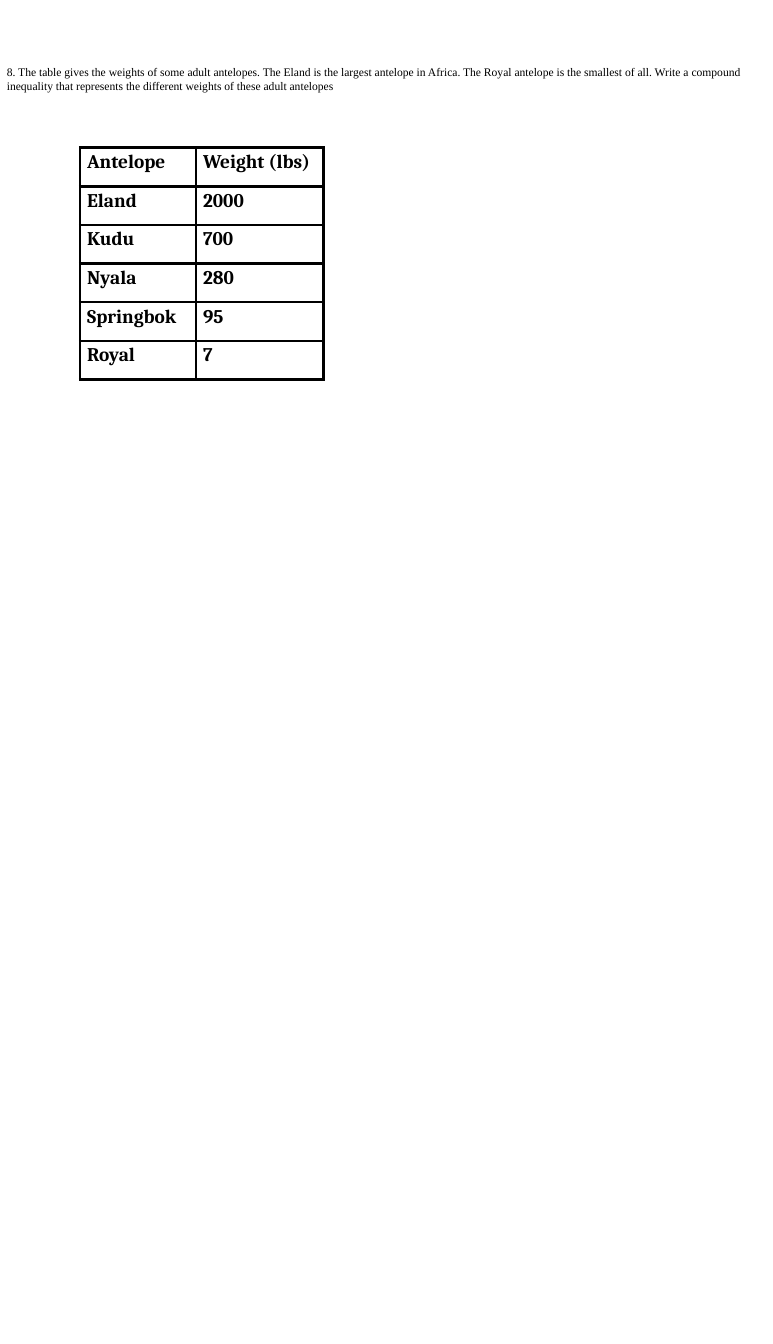
from lxml.etree import SubElement
from pptx import Presentation
from pptx.dml.color import RGBColor
from pptx.enum.text import MSO_AUTO_SIZE
from pptx.oxml.ns import qn
from pptx.util import Pt

TASK = (
    "8. The table gives the weights of some adult antelopes. "
    "The Eland is the largest antelope in Africa. "
    "The Royal antelope is the smallest of all. "
    "Write a compound inequality that represents the different weights "
    "of these adult antelopes"
)
ROWS = [
    ("Antelope", "Weight (lbs)"),
    ("Eland", "2000"),
    ("Kudu", "700"),
    ("Nyala", "280"),
    ("Springbok", "95"),
    ("Royal", "7"),
]
COLORS = {"ink": "000000", "paper": "FFFFFF"}
FORMATS = {
    "task": {"name": "Times New Roman", "size": Pt(12), "bold": False},
    "cell": {"name": "Cambria", "size": Pt(20), "bold": True},
}
WIDTHS = [120, 132]
HEIGHT = 40
BORDER = 3


def write(frame, text, kind):
    run = frame.paragraphs[0].add_run()
    run.text = text
    for key, value in FORMATS[kind].items():
        setattr(run.font, key, value)
    run.font.color.rgb = RGBColor.from_string(COLORS["ink"])


def border(cell):
    props = cell._tc.get_or_add_tcPr()
    for index, side in enumerate(("lnL", "lnR", "lnT", "lnB")):
        line = props.makeelement(qn(f"a:{side}"), {"w": str(Pt(BORDER))})
        fill = SubElement(line, qn("a:solidFill"))
        SubElement(fill, qn("a:srgbClr"), val=COLORS["ink"])
        props.insert(index, line)


def add_task(slide):
    box = slide.shapes.add_textbox(Pt(0), Pt(64), Pt(810), Pt(36))
    frame = box.text_frame
    frame.word_wrap = True
    frame.auto_size = MSO_AUTO_SIZE.SHAPE_TO_FIT_TEXT
    write(frame, TASK, "task")


def add_weights(slide):
    table = slide.shapes.add_table(
        len(ROWS), len(WIDTHS), Pt(83), Pt(152.8),
        Pt(sum(WIDTHS)), Pt(HEIGHT * len(ROWS)),
    ).table
    for column, width in zip(table.columns, WIDTHS):
        column.width = Pt(width)
    for r, row in enumerate(ROWS):
        for c, text in enumerate(row):
            cell = table.cell(r, c)
            cell.fill.solid()
            cell.fill.fore_color.rgb = RGBColor.from_string(COLORS["paper"])
            write(cell.text_frame, text, "cell")
            border(cell)


def main():
    deck = Presentation()
    deck.slide_width, deck.slide_height = Pt(800), Pt(1391)
    slide = deck.slides.add_slide(deck.slide_layouts[6])
    add_task(slide)
    add_weights(slide)
    deck.save("out.pptx")


if __name__ == "__main__":
    main()
